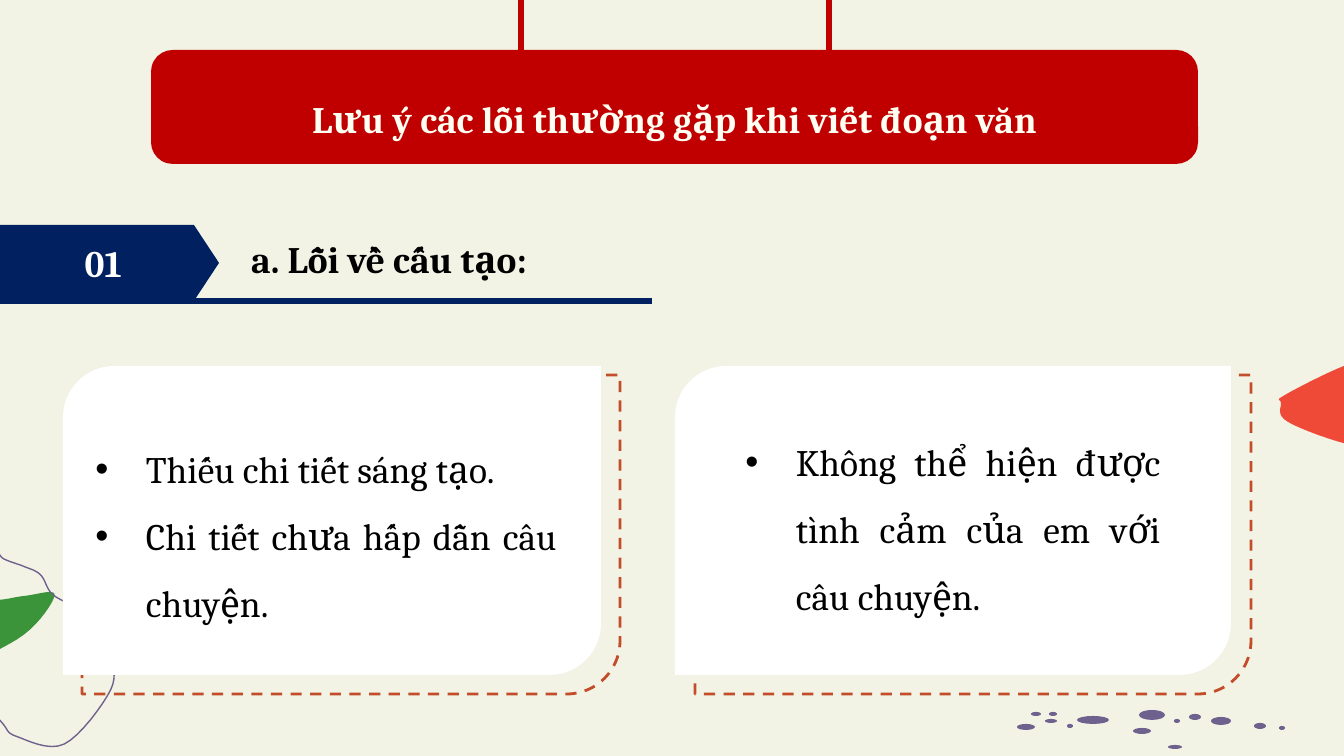
from dataclasses import dataclass
from math import cos, pi, sin

from lxml.etree import SubElement
from pptx import Presentation
from pptx.dml.color import RGBColor
from pptx.enum.dml import MSO_LINE_DASH_STYLE as Dash
from pptx.enum.shapes import MSO_CONNECTOR, MSO_SHAPE as Preset
from pptx.enum.text import MSO_ANCHOR as Anchor, MSO_AUTO_SIZE as AutoSize, PP_ALIGN as Align
from pptx.oxml.ns import qn
from pptx.util import Pt

EMU_PER_PX = 9144000 / 1344
FONT = "Cambria"

CREAM = RGBColor(0xF2, 0xF3, 0xE4)
IVORY = RGBColor(0xFF, 0xFF, 0xF3)
WHITE = RGBColor(0xFF, 0xFF, 0xFF)
BLACK = RGBColor(0x00, 0x00, 0x00)
CRIMSON = RGBColor(0xC0, 0x00, 0x00)
NAVY = RGBColor(0x00, 0x20, 0x60)
RUST = RGBColor(0xC3, 0x4C, 0x2B)
GREEN = RGBColor(0x3B, 0x94, 0x3A)
PURPLE = RGBColor(0x6E, 0x61, 0x8E)
CORAL = RGBColor(0xEF, 0x49, 0x38)


@dataclass(frozen=True)
class Box:
    left: int
    top: int
    width: int
    height: int

    def emu(self) -> list[int]:
        return [px(n) for n in (self.left, self.top, self.width, self.height)]


@dataclass(frozen=True)
class Blob:
    points: list[tuple[int, int]]
    fill: RGBColor | None = None
    line: RGBColor | None = None
    rotation: float = 0


@dataclass(frozen=True)
class Card:
    panel: Box
    shadow_left: int
    text: Box
    lines: list[str]


BLOBS = [
    Blob([(-95, 587), (-122, 598), (-164, 636), (-167, 644), (-157, 661),
          (-101, 673), (-48, 669), (22, 648), (59, 614), (30, 610),
          (1, 609), (-16, 599), (-40, 599), (-79, 587)],
         fill=GREEN, rotation=350.2),
    Blob([(78, 581), (106, 605), (122, 638), (101, 706), (54, 718), (35, 711),
          (-3, 691), (-17, 683), (-81, 669), (-121, 669), (-133, 667),
          (-141, 645), (-122, 613), (-86, 586), (-46, 556), (-28, 560),
          (-7, 559), (12, 560), (30, 573), (54, 576)],
         line=PURPLE, rotation=23.3),
    Blob([(1379, 359), (1344, 366), (1285, 395), (1281, 403), (1288, 422),
          (1355, 446), (1419, 450), (1509, 441), (1562, 414), (1527, 405),
          (1493, 396), (1473, 384), (1443, 382), (1398, 362)],
         fill=CORAL),
]

# Centre x, centre y, horizontal radius, vertical radius
SPECKS = [(1036, 714, 5, 2), (1053, 714, 4, 2), (1195, 717, 6, 3),
          (1152, 715, 13, 5), (1177, 721, 3, 2), (1051, 721, 6, 2),
          (1093, 720, 16, 4), (1221, 721, 10, 4), (1070, 726, 3, 2),
          (1260, 726, 6, 3), (1282, 728, 3, 2), (1026, 727, 9, 3),
          (1142, 731, 9, 3), (1175, 747, 7, 2)]

CARDS = [
    Card(Box(63, 366, 538, 309), 82, Box(82, 417, 488, 208),
         ["Thiếu chi tiết sáng tạo.", "Chi tiết chưa hấp dẫn câu chuyện."]),
    Card(Box(675, 366, 556, 309), 695, Box(732, 410, 442, 208),
         ["Không thể hiện được tình cảm của em với câu chuyện."]),
]


def px(length: float) -> int:
    return round(length * EMU_PER_PX)


def paint(shape, fill: RGBColor | None = None, line: RGBColor | None = None,
          width: float = 0.75, dash=None) -> None:
    shape.shadow.inherit = False
    if fill is None:
        shape.fill.background()
    else:
        shape.fill.solid()
        shape.fill.fore_color.rgb = fill
    if line is None:
        shape.line.fill.background()
    else:
        shape.line.color.rgb = line
        shape.line.width = Pt(width)
        shape.line.dash_style = dash


def write_text(shape, lines: list[str], color=BLACK, bold=False, align=Align.JUSTIFY,
               anchor=Anchor.TOP, spacing=1.0) -> None:
    frame = shape.text_frame
    frame.text = "\n".join(lines)
    frame.word_wrap = True
    frame.auto_size = AutoSize.NONE
    frame.vertical_anchor = anchor
    for paragraph in frame.paragraphs:
        paragraph.alignment = align
        paragraph.line_spacing = spacing
        paragraph.space_before = Pt(0)
        font = paragraph.runs[0].font
        font.name, font.size, font.bold = FONT, Pt(20), bold
        font.color.rgb = color


def place(placeholder, box: Box) -> None:
    """Position a placeholder and bring it to the front."""
    placeholder.left, placeholder.top, placeholder.width, placeholder.height = box.emu()
    element = placeholder.element
    element.getparent().append(element)


def add_panel(slide, preset, box: Box, **style):
    shape = slide.shapes.add_shape(preset, *box.emu())
    paint(shape, **style)
    return shape


def add_rule(slide, start: tuple[int, int], end: tuple[int, int], color: RGBColor) -> None:
    ends = [px(n) for n in (*start, *end)]
    rule = slide.shapes.add_connector(MSO_CONNECTOR.STRAIGHT, *ends)
    rule.line.color.rgb = color
    rule.line.width = Pt(3)
    SubElement(rule.element.spPr, qn("a:effectLst"))


def smooth(points: list[tuple[int, int]], steps: int = 8) -> list[tuple[float, float]]:
    """Closed Catmull-Rom curve through the points."""
    curve = []
    for i in range(len(points)):
        corners = [points[(i + k) % len(points)] for k in (-1, 0, 1, 2)]
        for t in (step / steps for step in range(steps)):
            curve.append(tuple(
                b + (c - a) * t / 2 + (2 * a - 5 * b + 4 * c - d) * t**2 / 2
                + (3 * b - a - 3 * c + d) * t**3 / 2
                for a, b, c, d in zip(*corners)))
    return curve


def ellipse(x: int, y: int, radius_x: int, radius_y: int, steps: int = 16):
    angles = [2 * pi * step / steps for step in range(steps)]
    return [(x + radius_x * cos(a), y + radius_y * sin(a)) for a in angles]


def add_outline(slide, contours, **style):
    contours = [[(px(x), px(y)) for x, y in contour] for contour in contours]
    builder = slide.shapes.build_freeform(*contours[0][0])
    for number, contour in enumerate(contours):
        if number:
            builder.move_to(*contour[0])
        builder.add_line_segments(contour[1:], close=True)
    shape = builder.convert_to_shape()
    paint(shape, **style)
    return shape


def add_card(slide, card: Card, placeholder) -> None:
    panel = card.panel
    add_panel(slide, Preset.ROUND_2_DIAG_RECTANGLE,
              Box(card.shadow_left, 375, panel.width, 319),
              line=RUST, width=1.5, dash=Dash.DASH)
    add_panel(slide, Preset.ROUND_2_DIAG_RECTANGLE, panel, fill=WHITE)
    place(placeholder, card.text)
    write_text(placeholder, card.lines, spacing=1.5)


def main() -> None:
    presentation = Presentation()
    presentation.slide_width, presentation.slide_height = px(1344), px(756)
    slide = presentation.slides.add_slide(presentation.slide_layouts[3])
    slide.background.fill.solid()
    slide.background.fill.fore_color.rgb = CREAM
    title, *bodies = slide.placeholders

    # Edge decorations
    for blob in BLOBS:
        shape = add_outline(slide, [smooth(blob.points)], fill=blob.fill, line=blob.line)
        shape.rotation = blob.rotation
    add_outline(slide, [ellipse(*speck) for speck in SPECKS], fill=PURPLE)

    # Hanging title banner
    for x in (521, 829):
        add_rule(slide, (x, 50), (x, 0), CRIMSON)
    banner_box = Box(151, 50, 1047, 114)
    banner = add_panel(slide, Preset.ROUNDED_RECTANGLE, banner_box, fill=CRIMSON)
    banner.adjustments[0] = 0.19
    place(title, banner_box)
    write_text(title, ["Lưu ý các lỗi thường gặp khi viết đoạn văn"], color=IVORY,
               bold=True, align=Align.CENTER, anchor=Anchor.MIDDLE, spacing=1.5)

    # Cards with bullet lists
    for card, body in zip(CARDS, bodies):
        add_card(slide, card, body)

    # Numbered section heading
    tag = add_panel(slide, Preset.PENTAGON, Box(0, 225, 219, 76), fill=NAVY)
    tag.adjustments[0] = 0.33
    write_text(tag, ["01"], color=WHITE, bold=True, align=Align.CENTER, anchor=Anchor.MIDDLE)
    add_rule(slide, (0, 301), (652, 301), NAVY)
    heading = slide.shapes.add_textbox(*Box(238, 230, 414, 59).emu())
    write_text(heading, ["a. Lỗi về cấu tạo:"], bold=True)

    presentation.save("out.pptx")


if __name__ == "__main__":
    main()
